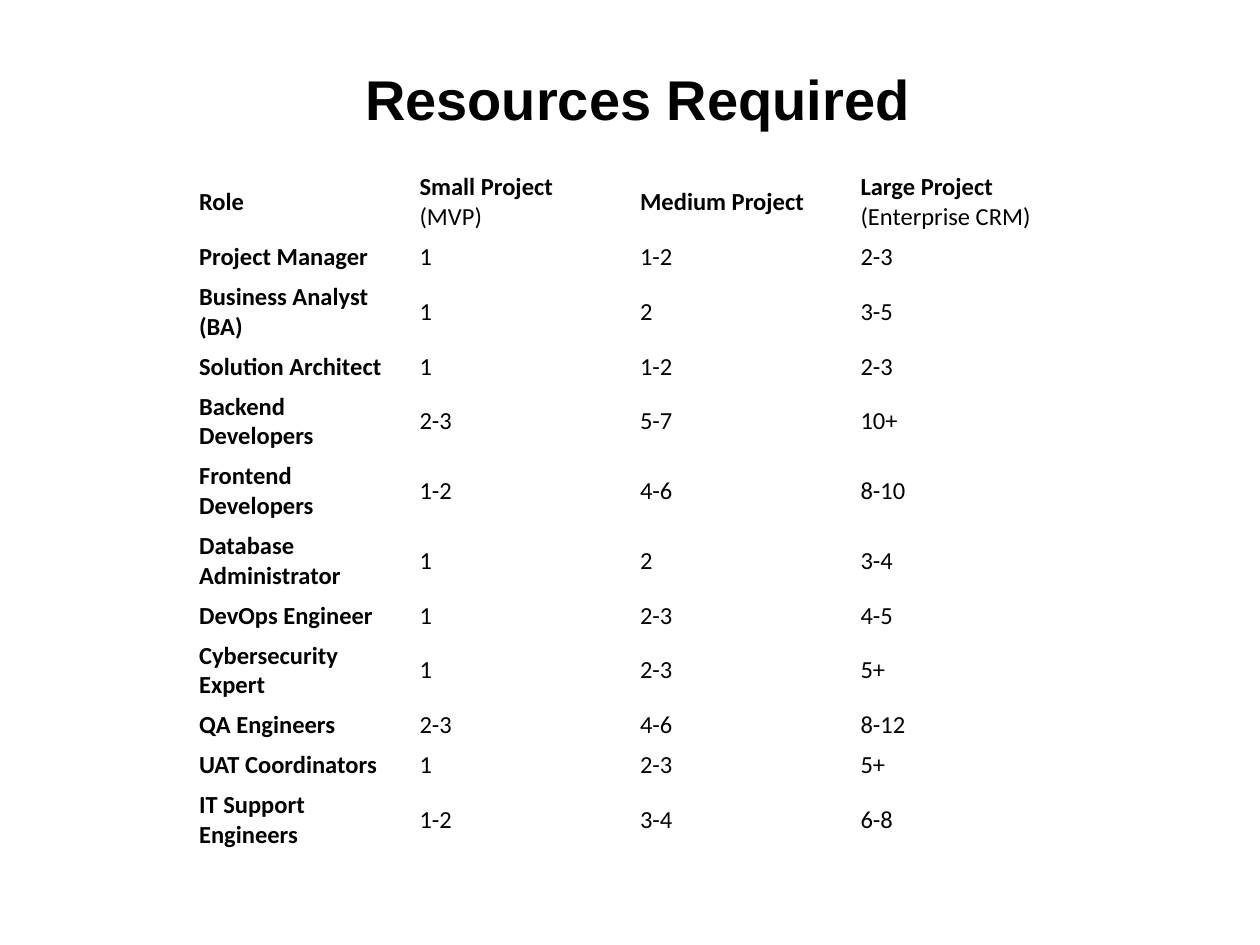
from pptx import Presentation
from pptx.dml.color import RGBColor
from pptx.enum.text import MSO_ANCHOR, PP_ALIGN
from pptx.util import Inches, Pt

MIDDLE = MSO_ANCHOR.MIDDLE
CENTER = PP_ALIGN.CENTER
BLACK = RGBColor(0, 0, 0)

# Content
TITLE = " Resources Required"
# Each heading: bold part, plain part
HEADINGS = [("Role", ""), ("Small Project", " (MVP)"),
            ("Medium Project", ""), ("Large Project", " (Enterprise CRM)")]
# Each role: lines its name takes, name, then staff per project size
ROLES = [
    (1, "Project Manager", "1", "1-2", "2-3"),
    (2, "Business Analyst (BA)", "1", "2", "3-5"),
    (1, "Solution Architect", "1", "1-2", "2-3"),
    (2, "Backend Developers", "2-3", "5-7", "10+"),
    (2, "Frontend Developers", "1-2", "4-6", "8-10"),
    (2, "Database Administrator", "1", "2", "3-4"),
    (1, "DevOps Engineer", "1", "2-3", "4-5"),
    (2, "Cybersecurity Expert", "1", "2-3", "5+"),
    (1, "QA Engineers", "2-3", "4-6", "8-12"),
    (1, "UAT Coordinators", "1", "2-3", "5+"),
    (2, "IT Support Engineers", "1-2", "3-4", "6-8"),
]

# Layout in inches
WIDTH, HEIGHT = 10, 7.5
TABLE_LEFT, TABLE_TOP, TABLE_WIDTH = 1.5, 1.33, 7
ROW_HEIGHTS = {1: 0.31, 2: 0.54}


def add_text(para, text, *, size=14, font="Calibri", bold=False):
    span = para.add_run()
    span.text = text
    span.font.size = Pt(size)
    span.font.name = font
    span.font.bold = bold
    span.font.color.rgb = BLACK


def add_title(page):
    box = page.shapes.title
    box.left, box.top = Inches(0.05 * WIDTH), Inches(0.04 * HEIGHT)
    box.width, box.height = Inches(0.9 * WIDTH), Inches(0.95)
    box.text_frame.vertical_anchor = MIDDLE
    para = box.text_frame.paragraphs[0]
    para.alignment = CENTER
    add_text(para, TITLE, size=32, font="Arial", bold=True)


def add_staff_table(page):
    # Every cell is a (bold part, plain part) pair
    rows = [HEADINGS]
    rows += [[(name, "")] + [("", count) for count in counts]
             for _, name, *counts in ROLES]
    heights = [ROW_HEIGHTS[lines] for lines in [2] + [role[0] for role in ROLES]]

    table = page.shapes.add_table(
        len(rows), len(HEADINGS), Inches(TABLE_LEFT), Inches(TABLE_TOP),
        Inches(TABLE_WIDTH), Inches(sum(heights))).table
    table.first_row = table.horz_banding = False

    for row, height, parts in zip(table.rows, heights, rows):
        row.height = Inches(height)
        for cell, (strong, plain) in zip(row.cells, parts):
            cell.fill.background()
            cell.vertical_anchor = MIDDLE
            cell.margin_left = cell.margin_right = Inches(0.08)
            cell.margin_top = cell.margin_bottom = Inches(0.04)
            para = cell.text_frame.paragraphs[0]
            if strong:
                add_text(para, strong, bold=True)
            if plain:
                add_text(para, plain)


def main():
    deck = Presentation()
    deck.slide_width, deck.slide_height = Inches(WIDTH), Inches(HEIGHT)
    page = deck.slides.add_slide(deck.slide_layouts[5])
    add_title(page)
    add_staff_table(page)
    deck.save("out.pptx")


if __name__ == "__main__":
    main()
